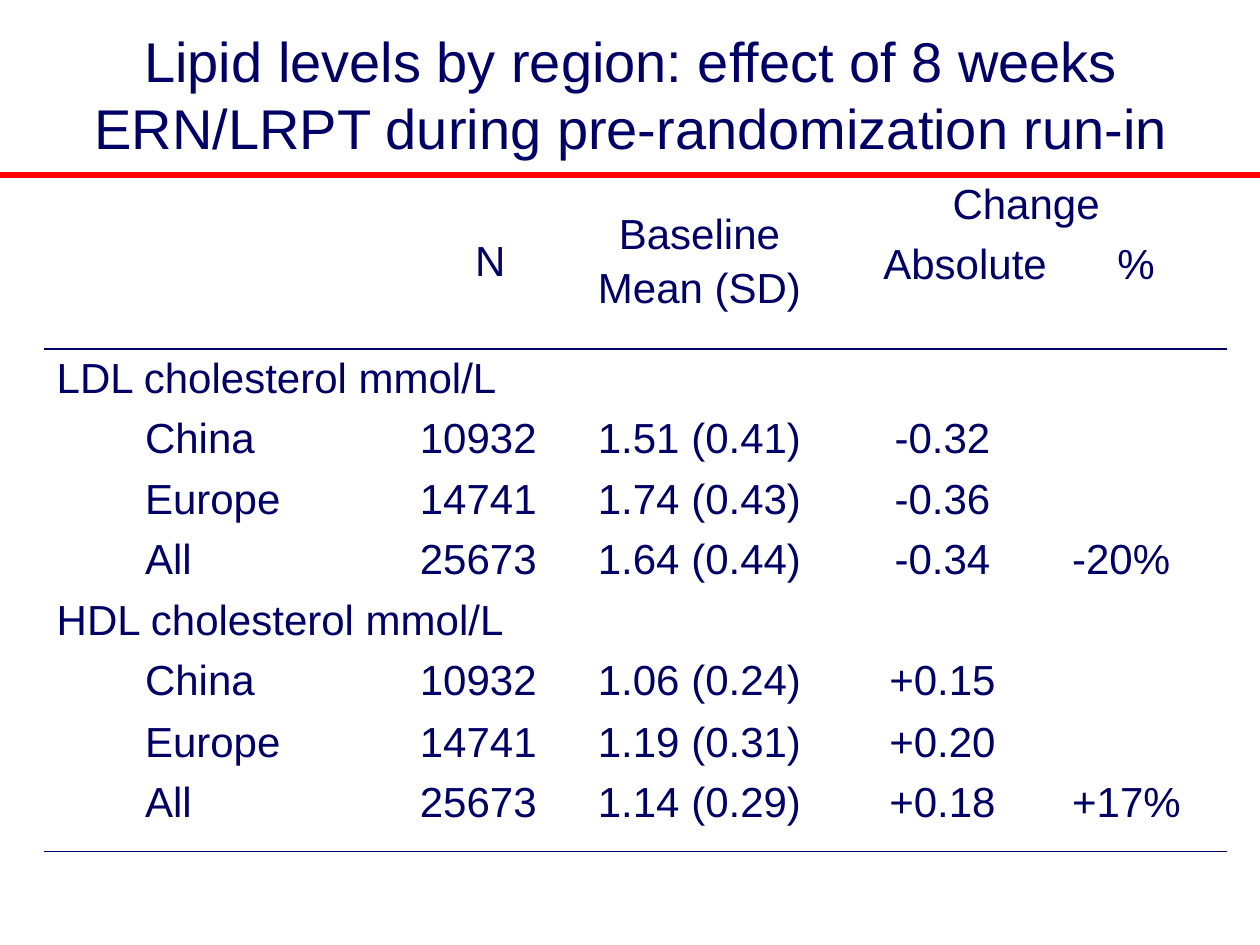
from dataclasses import dataclass

from lxml import etree
from pptx import Presentation
from pptx.dml.color import RGBColor
from pptx.enum.shapes import MSO_CONNECTOR
from pptx.enum.text import MSO_ANCHOR, MSO_AUTO_SIZE, PP_ALIGN
from pptx.oxml.ns import qn
from pptx.util import Cm, Pt


@dataclass(frozen=True)
class Theme:
    font: str = "Arial"
    ink: str = "000066"
    rule: str = "FF0000"
    title: int = 32
    body: int = 24
    rule_width: int = 3
    border_width: int = 1


THEME = Theme()
NO_STYLE = "{2D5ABB26-0587-4C30-8999-92F81FD0307C}"

# Indent, region, N, baseline, absolute change, gap, % change
COLUMNS = [1.78, 5.54, 3.35, 5.08, 4.72, 0.91, 2.46]
ROWS = [1.22, 2.28] + [1.22] * 5 + [1.24, 1.22, 1.57]
CENTRED = (3, 4)

HEADER = [
    ["", "", "N", "Baseline\nMean (SD)", "Change", "", ""],
    ["", "", "", "", "Absolute", "", "%"],
]
LIPIDS = {
    "LDL cholesterol mmol/L": [
        ("China", "10932", "1.51 (0.41)", "-0.32", ""),
        ("Europe", "14741", "1.74 (0.43)", "-0.36", ""),
        ("All", "25673", "1.64 (0.44)", "-0.34", "-20%"),
    ],
    "HDL cholesterol mmol/L": [
        ("China", "10932", "1.06 (0.24)", "+0.15", ""),
        ("Europe", "14741", "1.19 (0.31)", "+0.20", ""),
        ("All", "25673", "1.14 (0.29)", "+0.18", "+17%"),
    ],
}
# First and last (row, column) of each merged header or heading cell
HEADER_SPANS = [((0, 0), (0, 1)), ((0, 2), (1, 2)), ((0, 3), (1, 3)),
                ((0, 4), (0, 6)), ((1, 4), (1, 5))]
HEADING_SPANS = [((2, 0), (2, 3)), ((2, 4), (2, 5)), ((6, 0), (6, 6))]


def format_paragraph(p, size, align):
    p.alignment = align
    for r in p.runs:
        r.font.name = THEME.font
        r.font.size = Pt(size)
        r.font.color.rgb = RGBColor.from_string(THEME.ink)


def add_title(slide, text, left, top, width, height):
    sp = slide.shapes.title
    sp.left, sp.top, sp.width, sp.height = left, top, width, height
    tf = sp.text_frame
    tf.text = text
    tf.word_wrap = True
    tf.auto_size = MSO_AUTO_SIZE.NONE
    tf.vertical_anchor = MSO_ANCHOR.MIDDLE
    format_paragraph(tf.paragraphs[0], THEME.title, PP_ALIGN.CENTER)


def add_rule(slide, left, top, width):
    line = slide.shapes.add_connector(
        MSO_CONNECTOR.STRAIGHT, left, top, left + width, top)
    line.line.color.rgb = RGBColor.from_string(THEME.rule)
    line.line.width = Pt(THEME.rule_width)
    etree.SubElement(line._element.spPr, qn("a:effectLst"))


def add_bottom_border(cell):
    border = etree.Element(qn("a:lnB"), w=str(Pt(THEME.border_width)))
    fill = etree.SubElement(border, qn("a:solidFill"))
    etree.SubElement(fill, qn("a:srgbClr"), val=THEME.ink)
    cell._tc.get_or_add_tcPr().insert(0, border)


def fill_cell(cell, text, align):
    cell.fill.background()
    if not text:
        return
    tf = cell.text_frame
    tf.text = text
    for i, p in enumerate(tf.paragraphs):
        format_paragraph(p, THEME.body, align)
        if i:
            p.space_before = Pt(4)


def table_rows():
    """Return the full grid of cell texts, header rows first."""
    grid = list(HEADER)
    for heading, regions in LIPIDS.items():
        grid.append([heading] + [""] * 6)
        grid += [["", *region, ""] for region in regions]
    return grid


def add_lipid_table(slide, left, top):
    grid = table_rows()
    frame = slide.shapes.add_table(
        len(ROWS), len(COLUMNS), left, top, Cm(sum(COLUMNS)), Cm(sum(ROWS)))
    table = frame.table
    table.first_row = table.horz_banding = False
    table._tbl.tblPr.find(qn("a:tableStyleId")).text = NO_STYLE
    for column, width in zip(table.columns, COLUMNS):
        column.width = Cm(width)
    for row, height in zip(table.rows, ROWS):
        row.height = Cm(height)

    for i, texts in enumerate(grid):
        for j, text in enumerate(texts):
            centred = j in CENTRED or (i, j) == (0, 2)
            fill_cell(table.cell(i, j), text,
                      PP_ALIGN.CENTER if centred else PP_ALIGN.LEFT)

    region_spans = [((i, 5), (i, 6)) for i in (3, 4, 5, 7, 8, 9)]
    for first, last in HEADER_SPANS + HEADING_SPANS + region_spans:
        table.cell(*first).merge(table.cell(*last))

    tall = [table.cell(0, j) for j in (2, 3)]
    for cell in tall:
        cell.vertical_anchor = MSO_ANCHOR.MIDDLE
    ruled = [table.cell(i, j) for i in (1, len(ROWS) - 1)
             for j in range(len(COLUMNS))]
    for cell in tall + ruled:
        add_bottom_border(cell)


def main():
    prs = Presentation()
    prs.slide_width, prs.slide_height = Cm(25.4), Cm(19.05)
    slide = prs.slides.add_slide(prs.slide_layouts[5])
    add_title(slide, "Lipid levels by region: effect of 8 weeks "
              "ERN/LRPT during pre-randomization run-in",
              Cm(1.3), Cm(0.53), Cm(22.86), Cm(2.72))
    add_lipid_table(slide, Cm(0.89), Cm(3.53))
    add_rule(slide, 0, Cm(3.53), prs.slide_width)
    prs.save("out.pptx")


if __name__ == "__main__":
    main()
